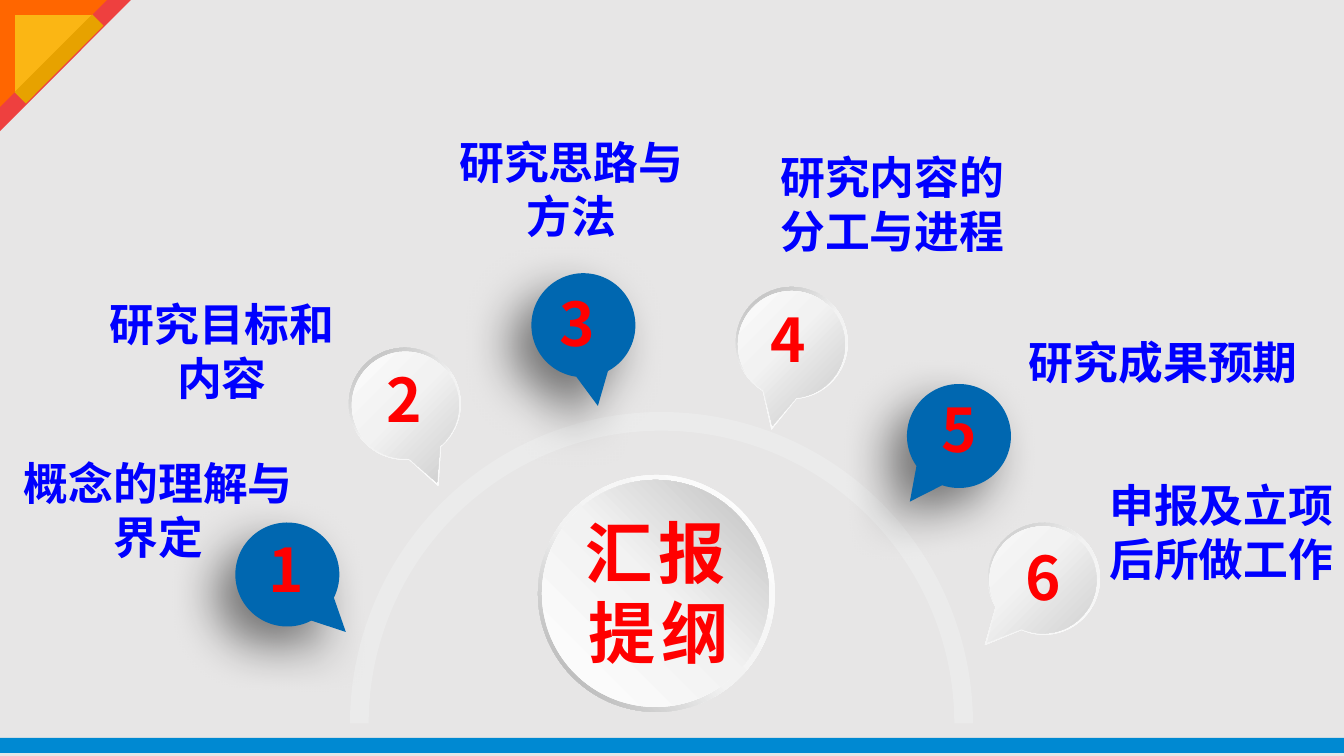
import math
import lxml.etree
import pptx
import pptx.util
import pptx.dml.color
import pptx.enum.shapes
import pptx.enum.text
import pptx.oxml
import pptx.oxml.ns

PX = 914400 / 100.8
FONT = "Noto Sans CJK SC"
NS = pptx.oxml.ns.nsdecls("a")
RED, BLUE, NAVY = "FF0000", "0000FF", "0067B0"
KIND = pptx.enum.shapes.MSO_SHAPE


def ink(code):
    return pptx.dml.color.RGBColor.from_string(code)


def paint(shape, tones, turn=0):
    shape.shadow.inherit = False
    if isinstance(tones, str):
        shape.fill.solid()
        shape.fill.fore_color.rgb = ink(tones)
    else:
        shape.fill.background()
        stops = "".join(
            f'<a:gs pos="{spot * 1000}"><a:srgbClr val="{ink(tone)}"/></a:gs>'
            for spot, tone in tones)
        grad = pptx.oxml.parse_xml(
            f'<a:gradFill {NS} rotWithShape="0"><a:gsLst>{stops}</a:gsLst>'
            f'<a:lin ang="{turn * 60000}" scaled="0"/></a:gradFill>')
        props = shape._element.spPr
        props.replace(props.find(pptx.oxml.ns.qn("a:noFill")), grad)
    shape.line.fill.background()


deck = pptx.Presentation()
deck.slide_width = round(1344 * PX)
deck.slide_height = round(756 * PX)
slide = deck.slides.add_slide(deck.slide_layouts[6])
slide.background.fill.solid()
slide.background.fill.fore_color.rgb = ink("E7E6E6")
shapes = slide.shapes

rim = [(0, "FFFFFF"), (55, "F2F2F2"), (100, "A6A6A6")]
face = [(0, "FFFFFF"), (43, "F2F2F2"), (100, "BFBFBF")]
disc = [(0, "FFFFFF"), (51, "F2F2F2"), (100, "BFBFBF")]

arc = shapes.add_shape(KIND.BLOCK_ARC, *[round(n * PX) for n in (350, 412, 623, 623)])
for index, value in enumerate((108, 0, 0.03)):
    arc.adjustments[index] = value
paint(arc, "EBEBEB")

blue = [(104, 134, NAVY, 0, 0)]
white = [(112, 145, rim, 235, 49), (107, 137, face, 45, 0)]
pins = [
    (586, 340, 169.8, blue),
    (1033, 591, 221.7, white),
    (788, 359, 193.2, white),
    (950, 448, 216.8, blue),
    (411, 419, 157.8, white),
    (298, 585, 134.5, blue),
]
step = math.radians(324 / 5)
pull = 4 / 3 * math.tan(step / 4)
for x, y, spin, layers in pins:
    for wide, high, tones, turn, hole in layers:
        left, top = x - wide / 2, y - high / 2
        path = shapes.build_freeform(round(left * PX), round(top * PX))
        path.add_line_segments([
            (round(a * PX), round(b * PX))
            for a, b in ((left + wide, top), (left + wide, top + high), (left, top + high))])
        pin = path.convert_to_shape()
        mid, base = wide / 2, high - wide / 2
        marks = [("moveTo", [(mid, 0)])]
        for rad in (wide / 2, hole):
            if not rad:
                continue
            turns = [math.radians(-72) + step * n for n in range(6)]
            start = (mid + rad * math.cos(turns[0]), base + rad * math.sin(turns[0]))
            marks.append(("moveTo" if rad == hole else "lnTo", [start]))
            for one, two in zip(turns, turns[1:]):
                marks.append(("cubicBezTo", [
                    (mid + rad * (math.cos(deg) - bend * math.sin(deg)),
                     base + rad * (math.sin(deg) + bend * math.cos(deg)))
                    for deg, bend in ((one, pull), (two, -pull), (two, 0))]))
            marks.append(("close", []))
        track = next(pin._element.iter(pptx.oxml.ns.qn("a:path")))
        for child in list(track):
            track.remove(child)
        for verb, dots in marks:
            move = lxml.etree.SubElement(track, pptx.oxml.ns.qn("a:" + verb))
            for a, b in dots:
                lxml.etree.SubElement(move, pptx.oxml.ns.qn("a:pt"),
                                      x=str(round(a * PX)), y=str(round(b * PX)))
        pin.rotation = spin
        paint(pin, tones, turn)
        if layers is blue:
            glow = pin._element.spPr.find(pptx.oxml.ns.qn("a:effectLst"))
            glow.append(pptx.oxml.parse_xml(
                f'<a:outerShdw {NS} blurRad="{35 * 12700}" dist="{20 * 12700}" '
                f'dir="{135 * 60000}" algn="ctr" rotWithShape="0">'
                f'<a:srgbClr val="{ink("000000")}"><a:alpha val="50000"/></a:srgbClr>'
                '</a:outerShdw>'))

ring = shapes.add_shape(KIND.DONUT, *[round(n * PX) for n in (538, 475, 237, 237)])
ring.adjustments[0] = 0.05
paint(ring, rim, 135)
core = shapes.add_shape(KIND.OVAL, *[round(n * PX) for n in (542, 480, 227, 227)])
paint(core, disc, 315)

spots = [("2", 374, 355), ("4", 758, 295), ("6", 1013, 533),
         ("5", 929, 385), ("3", 547, 279), ("1", 256, 525)]
heads = [
    ("概念的理解与界定", 0, 449, 317, 122),
    ("研究目标和内容", 93, 290, 258, 122),
    ("研究思路与方法", 444, 128, 255, 122),
    ("研究内容的分工与进程", 759, 143, 267, 122),
    ("研究成果预期", 1005, 328, 317, 68),
    ("申报及立项后所做工作", 1082, 471, 279, 122),
]
texts = [("汇报提纲", 558, 506, 201, 173, 48, RED, 10, 5)]
texts += [(*spot, 57, 87, 43, RED, 13, 7) for spot in spots]
texts += [(*head, 32, BLUE, 13, 7) for head in heads]
for words, x, y, wide, high, size, tone, side, top in texts:
    box = shapes.add_textbox(*[round(n * PX) for n in (x, y, wide, high)])
    frame = box.text_frame
    frame.word_wrap = size != 43
    frame.auto_size = pptx.enum.text.MSO_AUTO_SIZE.SHAPE_TO_FIT_TEXT
    frame.margin_left = frame.margin_right = round(side * PX)
    frame.margin_top = frame.margin_bottom = round(top * PX)
    para = frame.paragraphs[0]
    if size != 43:
        para.alignment = pptx.enum.text.PP_ALIGN.CENTER
    run = para.add_run()
    run.text = words
    run.font.size = pptx.util.Pt(size)
    run.font.bold = True
    run.font.name = FONT
    run.font.color.rgb = ink(tone)
    props = run._r.get_or_add_rPr()
    east = lxml.etree.SubElement(props, pptx.oxml.ns.qn("a:ea"))
    east.set("typeface", FONT)
    if size == 48:
        props.set("spc", "400")

trim = [
    (KIND.RECTANGLE, 0, 738, 1344, 15, 0, "0089D2"),
    (KIND.RIGHT_TRIANGLE, 0, 0, 131, 131, 90, "EE403F"),
    (KIND.RIGHT_TRIANGLE, 0, 0, 107, 107, 90, "FF6600"),
    (KIND.RIGHT_TRIANGLE, 15, 15, 78, 78, 90, "FBB614"),
    (KIND.RECTANGLE, 51, 4, 16, 110, 45, "E7A200"),
]
for kind, x, y, wide, high, spin, tone in trim:
    part = shapes.add_shape(kind, *[round(n * PX) for n in (x, y, wide, high)])
    part.rotation = spin
    paint(part, tone)

deck.save("out.pptx")
